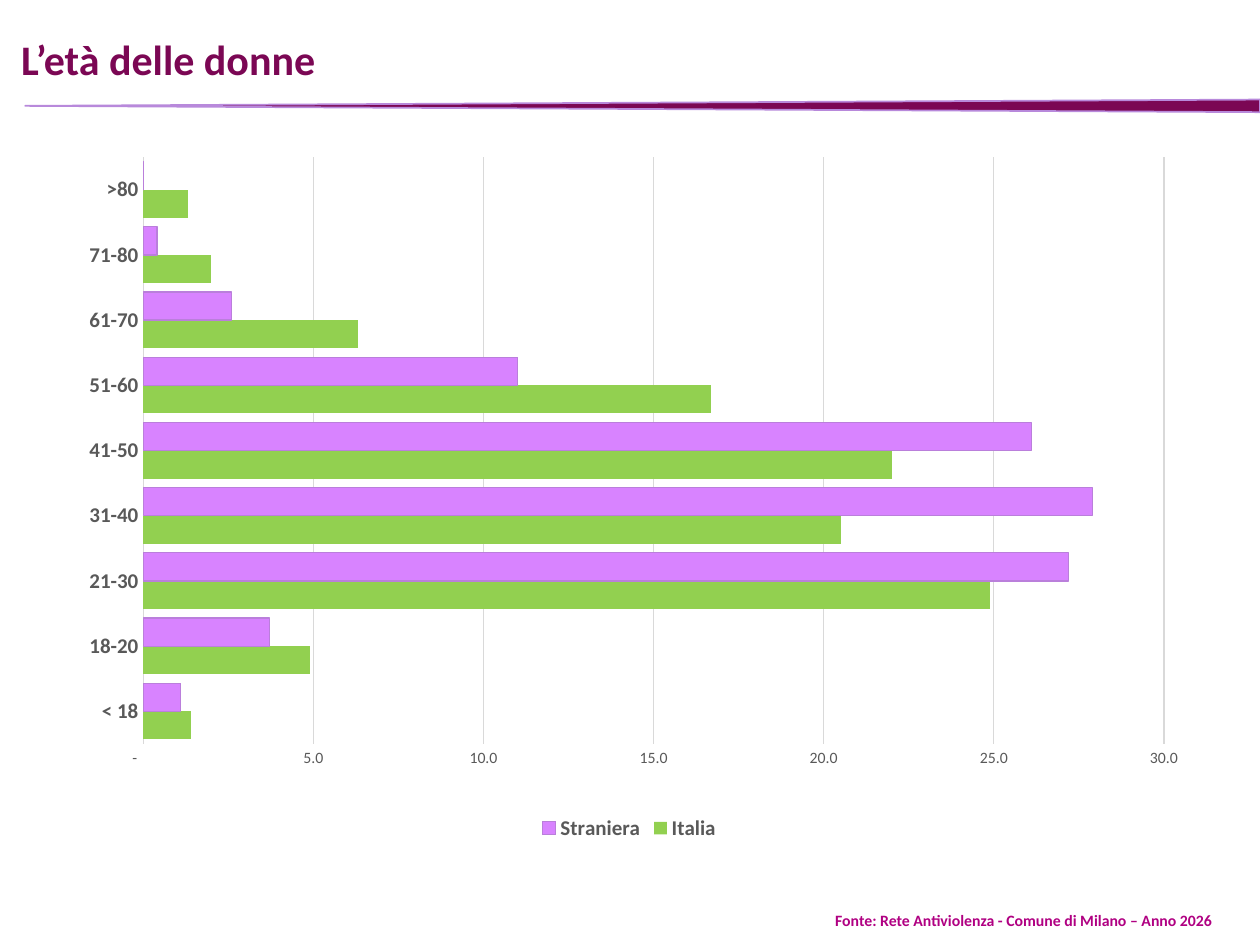
from dataclasses import dataclass

from lxml import etree
from pptx import Presentation
from pptx import util as u
from pptx.chart.data import CategoryChartData
from pptx.dml.color import RGBColor
from pptx.enum import chart as charts
from pptx.enum import shapes, text
from pptx.oxml.ns import qn


@dataclass(frozen=True)
class Theme:
    font: str = "Calibri"
    plum: str = "7B0754"
    magenta: str = "B00082"
    lilac: str = "B889DB"
    bar_edge: str = "BA7FDB"
    violet: str = "D883FF"
    green: str = "92D050"
    label: str = "595959"
    grid: str = "D9D9D9"
    title_size: float = 24
    label_size: float = 12
    small_size: float = 9


@dataclass(frozen=True)
class Frame:
    left: float
    top: float
    width: float
    height: float

    def lengths(self) -> tuple:
        return tuple(u.Pt(v) for v in (self.left, self.top, self.width, self.height))


@dataclass(frozen=True)
class Caption:
    words: str
    frame: Frame
    size: float
    color: str
    anchor: text.MSO_ANCHOR
    line_spacing: float


@dataclass(frozen=True)
class Origin:
    name: str
    shares: tuple
    fill: str
    edge: str = ""


THEME = Theme()
AGES = ("< 18", "18-20", "21-30", "31-40", "41-50", "51-60", "61-70", "71-80", ">80")
ORIGINS = (
    Origin("Italia", (1.4, 4.9, 24.9, 20.5, 22, 16.7, 6.3, 2, 1.3), THEME.green),
    Origin("Straniera", (1.1, 3.7, 27.2, 27.9, 26.1, 11, 2.6, 0.4, 0),
           THEME.violet, THEME.bar_edge),
)
CAPTIONS = (
    Caption("L’età delle donne", Frame(5, 12.2, 710.6, 46.8), THEME.title_size,
            THEME.plum, text.MSO_ANCHOR.MIDDLE, 0.9),
    Caption("Fonte: Rete Antiviolenza - Comune di Milano – Anno 2026",
            Frame(470.2, 517, 249.8, 18), THEME.small_size,
            THEME.magenta, text.MSO_ANCHOR.TOP, 1),
)
RULE_FRAME = Frame(363.6, -292.3, 7.2, 705.6)
CHART_FRAME = Frame(36, 88.6, 647.3, 394.6)
PLOT_LAYOUT = {"layoutTarget": "inner", "xMode": "edge", "yMode": "edge",
               "x": 0.071, "y": 0.003, "w": 0.901, "h": 0.85}
NUMBER_FORMAT = r'_-* #,##0.0_-;\-* #,##0.0_-;_-* "-"??_-;'


def set_all(target, values: dict) -> None:
    for name, value in values.items():
        setattr(target, name, value)


def style_font(font, size: float, color: str, bold: bool = False) -> None:
    set_all(font, {"name": THEME.font, "size": u.Pt(size), "bold": bold})
    font.color.rgb = RGBColor.from_string(color)


def paint(fill, color: str) -> None:
    fill.solid()
    fill.fore_color.rgb = RGBColor.from_string(color)


def outline(line, color: str, width: float) -> None:
    paint(line.fill, color)
    line.width = u.Pt(width)


def add_caption(page, caption: Caption) -> None:
    box = page.shapes.add_textbox(*caption.frame.lengths())
    set_all(box.text_frame, {"word_wrap": True, "vertical_anchor": caption.anchor})
    para = box.text_frame.paragraphs[0]
    para.line_spacing = caption.line_spacing
    span = para.add_run()
    span.text = caption.words
    style_font(span.font, caption.size, caption.color, True)


def add_tapered_rule(page) -> None:
    rule = page.shapes.add_shape(shapes.MSO_SHAPE.FLOWCHART_EXTRACT, *RULE_FRAME.lengths())
    rule.rotation = 270
    rule.shadow.inherit = False
    paint(rule.fill, THEME.plum)
    outline(rule.line, THEME.lilac, 1)


def place_plot(chart) -> None:
    """Fix the inner plot area as fractions of the chart."""
    area = chart._chartSpace.chart.plotArea
    for old in area.findall(qn("c:layout")):
        area.remove(old)
    layout = etree.Element(qn("c:layout"))
    manual = etree.SubElement(layout, qn("c:manualLayout"))
    for name, value in PLOT_LAYOUT.items():
        etree.SubElement(manual, qn(f"c:{name}")).set("val", str(value))
    area.insert(0, layout)


def style_axis(axis, size: float, bold: bool) -> None:
    set_all(axis, {"major_tick_mark": charts.XL_TICK_MARK.NONE,
                   "minor_tick_mark": charts.XL_TICK_MARK.NONE})
    axis.format.line.fill.background()
    style_font(axis.tick_labels.font, size, THEME.label, bold)


def add_age_chart(page) -> None:
    data = CategoryChartData(number_format="0.0")
    data.categories = AGES
    for origin in ORIGINS:
        data.add_series(origin.name, origin.shares)
    chart = page.shapes.add_chart(
        charts.XL_CHART_TYPE.BAR_CLUSTERED, *CHART_FRAME.lengths(), data).chart
    set_all(chart, {"has_title": False, "has_legend": True})
    style_font(chart.font, 10, "000000")
    set_all(chart.legend, {"position": charts.XL_LEGEND_POSITION.BOTTOM,
                           "include_in_layout": False})
    style_font(chart.legend.font, THEME.label_size, THEME.label, True)
    set_all(chart.plots[0], {"gap_width": 32, "overlap": 0, "vary_by_categories": False})
    for series, origin in zip(chart.plots[0].series, ORIGINS):
        series.invert_if_negative = False
        paint(series.format.fill, origin.fill)
        if origin.edge:
            outline(series.format.line, origin.edge, 0.75)
    style_axis(chart.category_axis, THEME.label_size, True)
    values = chart.value_axis
    style_axis(values, THEME.small_size, False)
    set_all(values, {"minimum_scale": 0, "maximum_scale": 30, "major_unit": 5,
                     "has_major_gridlines": True})
    set_all(values.tick_labels, {"number_format": NUMBER_FORMAT,
                                 "number_format_is_linked": False})
    outline(values.major_gridlines.format.line, THEME.grid, 0.75)
    place_plot(chart)


def main() -> None:
    deck = Presentation()
    set_all(deck, {"slide_width": u.Pt(720), "slide_height": u.Pt(540)})
    page = deck.slides.add_slide(deck.slide_layouts[6])
    add_tapered_rule(page)
    for caption in CAPTIONS:
        add_caption(page, caption)
    add_age_chart(page)
    deck.save("out.pptx")


if __name__ == "__main__":
    main()
